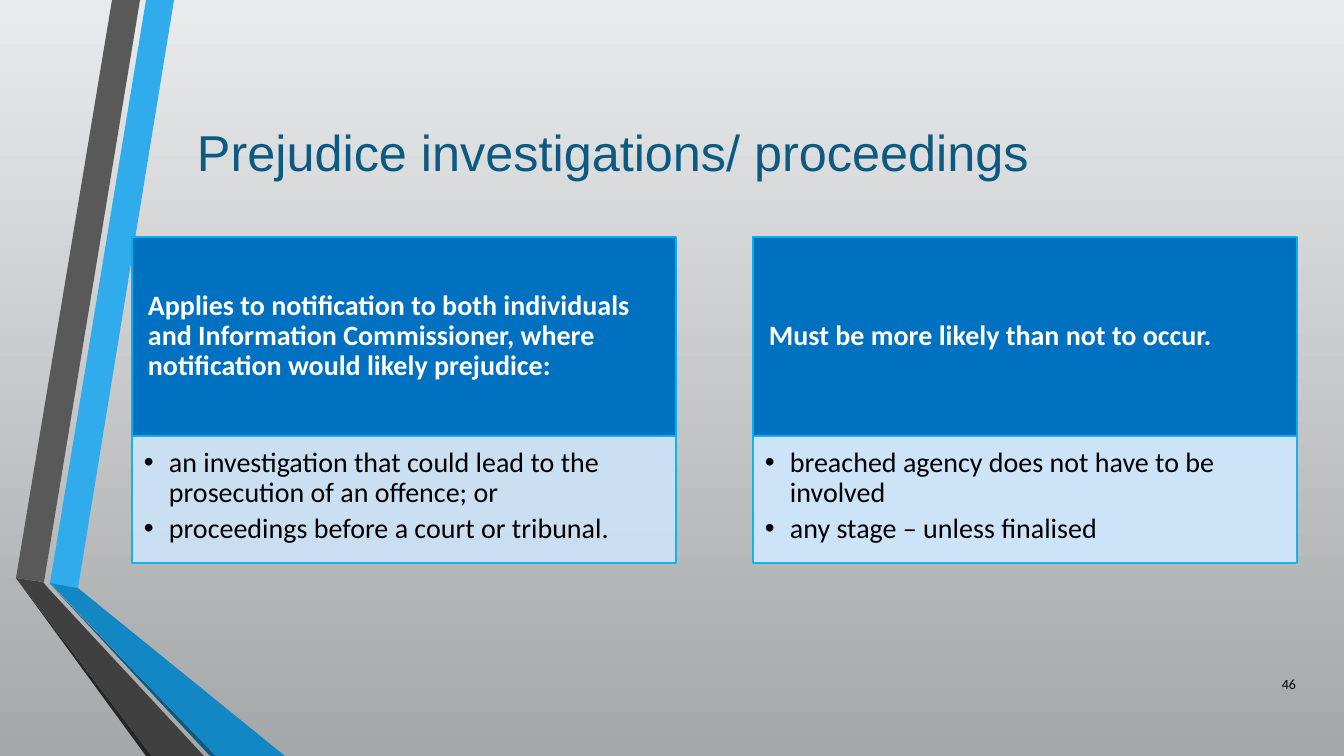
from dataclasses import dataclass

from pptx import Presentation
from pptx.dml.color import RGBColor
from pptx.enum.shapes import MSO_SHAPE
from pptx.enum.text import MSO_ANCHOR, MSO_AUTO_SIZE, PP_ALIGN
from pptx.oxml.ns import qn
from pptx.oxml.xmlchemy import OxmlElement
from pptx.util import Emu, Pt

PX = 914400 / 100.8
RECT = MSO_SHAPE.RECTANGLE
TOP, MIDDLE = MSO_ANCHOR.TOP, MSO_ANCHOR.MIDDLE
LEFT, RIGHT = PP_ALIGN.LEFT, PP_ALIGN.RIGHT
NO_FIT = MSO_AUTO_SIZE.NONE


@dataclass(frozen=True)
class Theme:
    bg_top: str = "E9EAEB"
    bg_bottom: str = "A5A8A9"
    title: str = "0C5A82"
    head: str = "0070C0"
    body: str = "CDE3F8"
    border: str = "00B0F0"
    white: str = "FFFFFF"
    black: str = "000000"
    title_font: str = "Arial"
    text_font: str = "Calibri"
    title_size: int = 36
    text_size: int = 20
    number_size: int = 10


@dataclass(frozen=True)
class Ribbon:
    color: str
    points: tuple[tuple[int, int], ...]


@dataclass(frozen=True)
class Card:
    heading: str
    bullets: tuple[str, ...]
    body_alpha: int


THEME = Theme()

RIBBONS = (
    Ribbon("30ACEC", ((50, 583), (78, 588), (174, 0), (146, 0))),
    Ribbon("595959", ((140, 0), (112, 0), (16, 578), (44, 582))),
    Ribbon("262626", ((16, 578), (146, 756), (152, 756))),
    Ribbon("0C5A82", ((50, 584), (210, 756), (216, 756))),
    Ribbon("1287C3", ((50, 583), (216, 756), (285, 756), (78, 588))),
    Ribbon("404040", ((16, 578), (152, 756), (204, 756), (48, 588), (43, 582))),
)

CARDS = (
    Card("Applies to notification to both individuals and Information "
         "Commissioner, where notification would likely prejudice:",
         ("an investigation that could lead to the prosecution of an offence; or",
          "proceedings before a court or tribunal."), 90),
    Card("Must be more likely than not to occur.",
         ("breached agency does not have to be involved",
          "any stage – unless finalised"), 100),
)
CARD_LEFT, CARD_TOP, CARD_WIDTH, CARD_STEP = 132, 237, 544, 621
HEAD_HEIGHT, BODY_HEIGHT = 199, 127
LINE_ALPHA = 90


def px(n: int) -> Emu:
    return Emu(round(n * PX))


def rgb(color: str) -> RGBColor:
    return RGBColor.from_string(color)


def set_frame(tf, anchor, margins: tuple[int, int, int, int]) -> None:
    tf.word_wrap = True
    tf.auto_size = NO_FIT
    tf.vertical_anchor = anchor
    (tf.margin_left, tf.margin_top,
     tf.margin_right, tf.margin_bottom) = map(px, margins)


def set_font(p, name: str, size: int, color: str, bold: bool = False) -> None:
    p.font.name, p.font.size, p.font.bold = name, Pt(size), bold
    p.font.color.rgb = rgb(color)


def add_bullet(p, indent: int) -> None:
    pPr = p._p.get_or_add_pPr()
    pPr.set("marL", str(px(indent)))
    pPr.set("indent", str(-px(indent)))
    bu_font = OxmlElement("a:buFont")
    bu_font.set("typeface", "Arial")
    bu_char = OxmlElement("a:buChar")
    bu_char.set("char", "•")
    pPr.extend((bu_font, bu_char))


def set_alpha(color_format_parent, percent: int) -> None:
    for clr in color_format_parent.iter(qn("a:srgbClr")):
        alpha = OxmlElement("a:alpha")
        alpha.set("val", str(percent * 1000))
        clr.append(alpha)


def add_ribbon(s, ribbon: Ribbon) -> None:
    builder = s.shapes.build_freeform(*ribbon.points[0], scale=PX)
    builder.add_line_segments(ribbon.points[1:], close=True)
    sp = builder.convert_to_shape()
    sp.shadow.inherit = False
    sp.fill.solid()
    sp.fill.fore_color.rgb = rgb(ribbon.color)
    sp.line.fill.background()


def add_panel(s, x: int, y: int, height: int, color: str):
    sp = s.shapes.add_shape(RECT, px(x), px(y), px(CARD_WIDTH), px(height))
    sp.shadow.inherit = False
    sp.fill.solid()
    sp.fill.fore_color.rgb = rgb(color)
    sp.line.color.rgb = rgb(THEME.border)
    sp.line.width = Pt(1.25)
    return sp


def add_card(s, x: int, card: Card) -> None:
    # Heading panel
    tf = add_panel(s, x, CARD_TOP, HEAD_HEIGHT, THEME.head).text_frame
    set_frame(tf, MIDDLE, (16, 9, 16, 9))
    p = tf.paragraphs[0]
    p.text, p.alignment, p.line_spacing = card.heading, LEFT, 0.9
    set_font(p, THEME.text_font, THEME.text_size, THEME.white, bold=True)

    # Bullet panel
    sp = add_panel(s, x, CARD_TOP + HEAD_HEIGHT, BODY_HEIGHT, THEME.body)
    spPr = sp._element.spPr
    set_alpha(spPr.find(qn("a:solidFill")), card.body_alpha)
    set_alpha(spPr.find(qn("a:ln")), LINE_ALPHA)
    tf = sp.text_frame
    set_frame(tf, TOP, (12, 12, 16, 17))
    for i, bullet in enumerate(card.bullets):
        p = tf.add_paragraph() if i else tf.paragraphs[0]
        p.text, p.alignment, p.line_spacing = bullet, LEFT, 0.9
        p.space_after = Pt(4)
        add_bullet(p, 25)
        set_font(p, THEME.text_font, THEME.text_size, THEME.black)


def main() -> None:
    prs = Presentation()
    prs.slide_width, prs.slide_height = px(1344), px(756)
    s = prs.slides.add_slide(prs.slide_layouts[5])

    # Background
    fill = s.background.fill
    fill.gradient()
    fill.gradient_angle = 270
    for stop, color in zip(fill.gradient_stops, (THEME.bg_top, THEME.bg_bottom)):
        stop.color.rgb = rgb(color)

    # Ribbons
    for ribbon in RIBBONS:
        add_ribbon(s, ribbon)

    # Title
    title = s.shapes.title
    title.left, title.top, title.width, title.height = map(px, (86, 121, 1005, 60))
    set_frame(title.text_frame, MIDDLE, (111, 5, 10, 5))
    p = title.text_frame.paragraphs[0]
    p.text, p.alignment = "Prejudice investigations/ proceedings", LEFT
    set_font(p, THEME.title_font, THEME.title_size, THEME.title)

    # Cards
    for i, card in enumerate(CARDS):
        add_card(s, CARD_LEFT + i * CARD_STEP, card)

    # Slide number
    tf = s.shapes.add_textbox(*map(px, (1246, 664, 60, 40))).text_frame
    set_frame(tf, MIDDLE, (10, 5, 10, 5))
    p = tf.paragraphs[0]
    p.text, p.alignment = "46", RIGHT
    set_font(p, THEME.text_font, THEME.number_size, THEME.black)

    prs.save("out.pptx")


if __name__ == "__main__":
    main()
